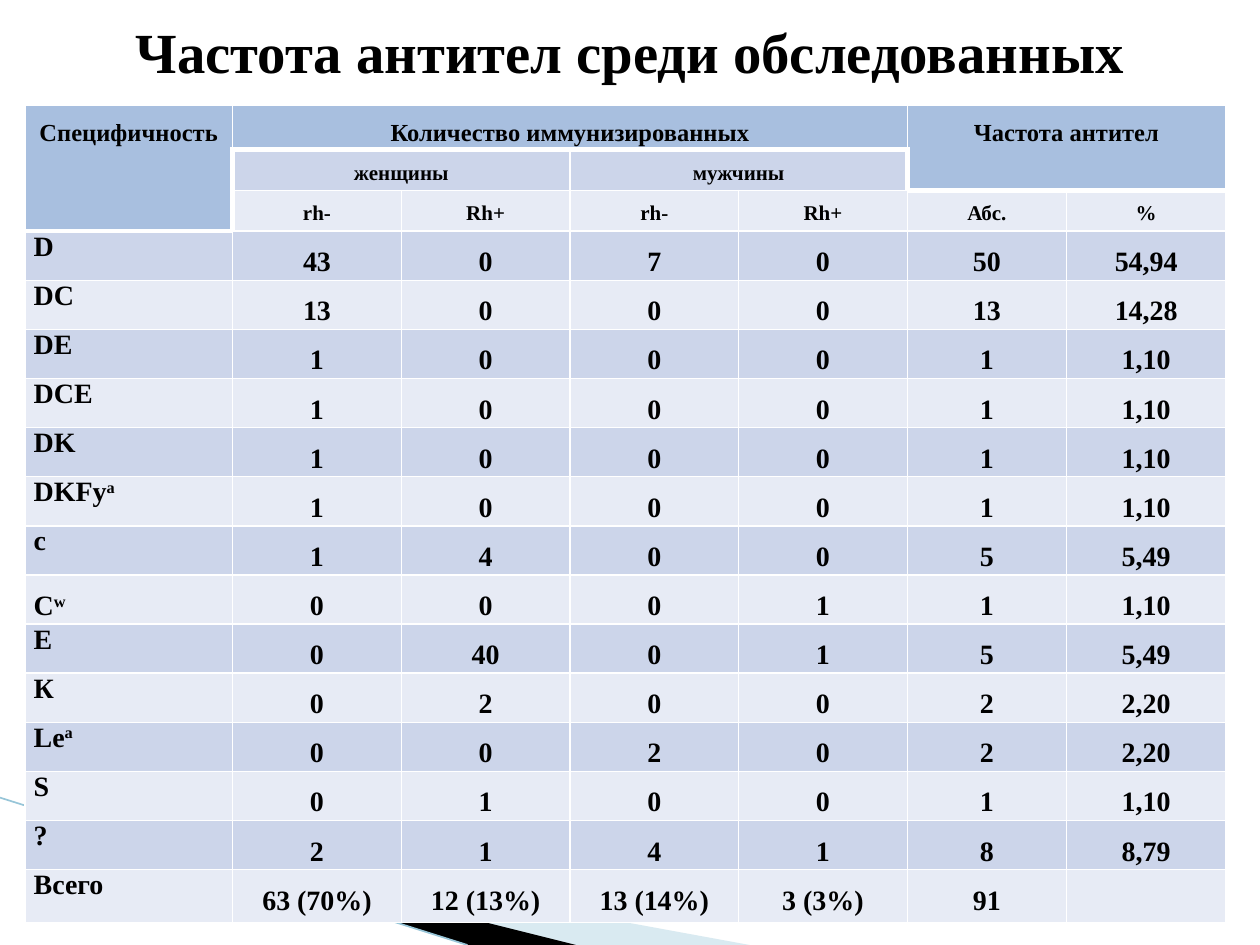
from lxml import etree
from pptx import Presentation
from pptx import util as u
from pptx.dml.color import RGBColor
from pptx.enum import shapes, text
from pptx.oxml import ns

FONT = "Times New Roman"
COLORS = {"ink": "000000", "head": "A8BFDF", "dark_band": "CCD5EA", "light_band": "E7EBF5",
          "border": "FFFFFF", "sweep": "A0CBDC", "edge": "97C5D8"}
COLUMNS = [4.19, 3.4, 3.4, 3.4, 3.4, 3.21, 3.21]
ROWS = [0.89, 0.71, 0.61] + [0.99] * 13 + [1.07]
SPANS = [(0, 0, 2, 0), (0, 1, 0, 4), (0, 5, 1, 6), (1, 1, 1, 2), (1, 3, 1, 4)]
HEAVY = {
    "L": {(1, 1), (2, 1)},
    "R": {(1, 3), (1, 4)},
    "T": {(1, 1), (1, 2), (1, 3), (1, 4), (2, 5), (2, 6), (3, 0)},
    "B": {(0, column) for column in range(7)} | {(1, 5), (1, 6), (2, 0)},
}
HEADINGS = [
    ["Специфичность", "Количество иммунизированных", "", "", "", "Частота антител", ""],
    ["", "женщины", "", "мужчины", "", "", ""],
    ["", "rh-", "Rh+", "rh-", "Rh+", "Абс.", "%"],
]
ANTIBODIES = [
    ["D", "43", "0", "7", "0", "50", "54,94"],
    ["DC", "13", "0", "0", "0", "13", "14,28"],
    ["DE", "1", "0", "0", "0", "1", "1,10"],
    ["DСE", "1", "0", "0", "0", "1", "1,10"],
    ["DK", "1", "0", "0", "0", "1", "1,10"],
    ["DKFy^a", "1", "0", "0", "0", "1", "1,10"],
    ["c", "1", "4", "0", "0", "5", "5,49"],
    ["C^w", "0", "0", "0", "1", "1", "1,10"],
    ["E", "0", "40", "0", "1", "5", "5,49"],
    ["К", "0", "2", "0", "0", "2", "2,20"],
    ["Le^а", "0", "0", "2", "0", "2", "2,20"],
    ["S", "0", "1", "0", "0", "1", "1,10"],
    ["?", "2", "1", "4", "1", "8", "8,79"],
    ["Всего", "63 (70%)", "12 (13%)", "13 (14%)", "3 (3%)", "91", ""],
]


def color(name):
    return RGBColor.from_string(COLORS[name])


def add_span(para, words, size, raised=False):
    span = para.add_run()
    span.text = words
    span.font.name = FONT
    span.font.size = u.Pt(size)
    span.font.bold = True
    span.font.color.rgb = color("ink")
    if raised:
        span.font._element.set("baseline", "30000")


def add_sweep(page, left, top, points, fill, opacity=None):
    corners = [(u.Cm(left + x), u.Cm(top + y)) for x, y in points]
    builder = page.shapes.build_freeform(*corners[0])
    builder.add_line_segments(corners[1:], close=True)
    shape = builder.convert_to_shape()
    shape.shadow.inherit = False
    shape.fill.solid()
    shape.fill.fore_color.rgb = color(fill)
    shape.line.fill.background()
    if opacity:
        tone = shape._element.spPr.find(ns.qn("a:solidFill"))[0]
        etree.SubElement(tone, ns.qn("a:alpha"), val=str(opacity * 1000))


def add_corner(page, left, top):
    add_sweep(page, left, top, [(1.4, 0.46), (15.11, 2.97), (11.58, 2.97), (1.4, 0.43)], "sweep", 40)
    add_sweep(page, left, top, [(1.35, 0.4), (11.61, 2.97), (9.45, 2.97), (1.37, 0.43)], "ink")
    edge = page.shapes.add_connector(shapes.MSO_CONNECTOR.STRAIGHT, u.Cm(left), u.Cm(top),
                                     u.Cm(left + 9.42), u.Cm(top + 2.97))
    edge.line.color.rgb = color("edge")
    edge.line.width = u.Pt(0.95)
    etree.SubElement(edge._element.spPr, ns.qn("a:effectLst"))


def add_borders(cell, row, column):
    properties = cell._tc.get_or_add_tcPr()
    for side in "LRTB":
        points = 3 if (row, column) in HEAVY[side] else 1
        line = etree.SubElement(properties, ns.qn("a:ln" + side), w=str(u.Pt(points)))
        fill = etree.SubElement(line, ns.qn("a:solidFill"))
        etree.SubElement(fill, ns.qn("a:srgbClr"), val=COLORS["border"])


def cell_fill(row, column):
    if row == 0 or (column == 0 and row < 3) or (column > 4 and row < 2):
        return "head"
    return "dark_band" if row % 2 else "light_band"


def fill_cell(cell, words, row, column):
    cell.margin_left = cell.margin_right = u.Cm(0.18)
    cell.margin_top = cell.margin_bottom = 0
    add_borders(cell, row, column)
    cell.fill.solid()
    cell.fill.fore_color.rgb = color(cell_fill(row, column))
    if not words:
        return
    para = cell.text_frame.paragraphs[0]
    if column or row < 3:
        para.alignment = text.PP_ALIGN.CENTER
        para.line_spacing = 1.5
    elif words == "C^w":
        para.alignment = text.PP_ALIGN.JUSTIFY
        para.line_spacing = 1.5
    size = 14 if row == 0 else 12 if row < 3 else 16
    base, _, raised = words.partition("^")
    add_span(para, base, size)
    if raised:
        add_span(para, raised, size, raised=True)


def add_antibody_table(page, left, top):
    rows = HEADINGS + ANTIBODIES
    frame = page.shapes.add_table(len(ROWS), len(COLUMNS), u.Cm(left), u.Cm(top),
                                  u.Cm(sum(COLUMNS)), u.Cm(sum(ROWS)))
    table = frame.table
    for column, width in zip(table.columns, COLUMNS):
        column.width = u.Cm(width)
    for row, height in zip(table.rows, ROWS):
        row.height = u.Cm(height)
    for first_row, first_column, last_row, last_column in SPANS:
        table.cell(first_row, first_column).merge(table.cell(last_row, last_column))
    for row, values in enumerate(rows):
        for column, words in enumerate(values):
            fill_cell(table.cell(row, column), words, row, column)


def set_title(page, left, top, width, height):
    title = page.shapes.title
    title.left, title.top, title.width, title.height = map(u.Cm, (left, top, width, height))
    box = title.text_frame
    box.word_wrap = True
    box.auto_size = text.MSO_AUTO_SIZE.NONE
    box.vertical_anchor = text.MSO_ANCHOR.MIDDLE
    box.margin_top = box.margin_bottom = 0
    para = box.paragraphs[0]
    para.alignment = text.PP_ALIGN.CENTER
    add_span(para, "Частота антител среди обследованных", 32.4)


def main():
    deck = Presentation()
    deck.slide_width, deck.slide_height = u.Cm(25.4), u.Cm(19.05)
    page = deck.slides.add_slide(deck.slide_layouts[5])
    set_title(page, 1.27, 0.33, 22.86, 1.4)
    add_corner(page, 0, 16.08)
    add_antibody_table(page, 0.5, 2.13)
    deck.save("out.pptx")


if __name__ == "__main__":
    main()
